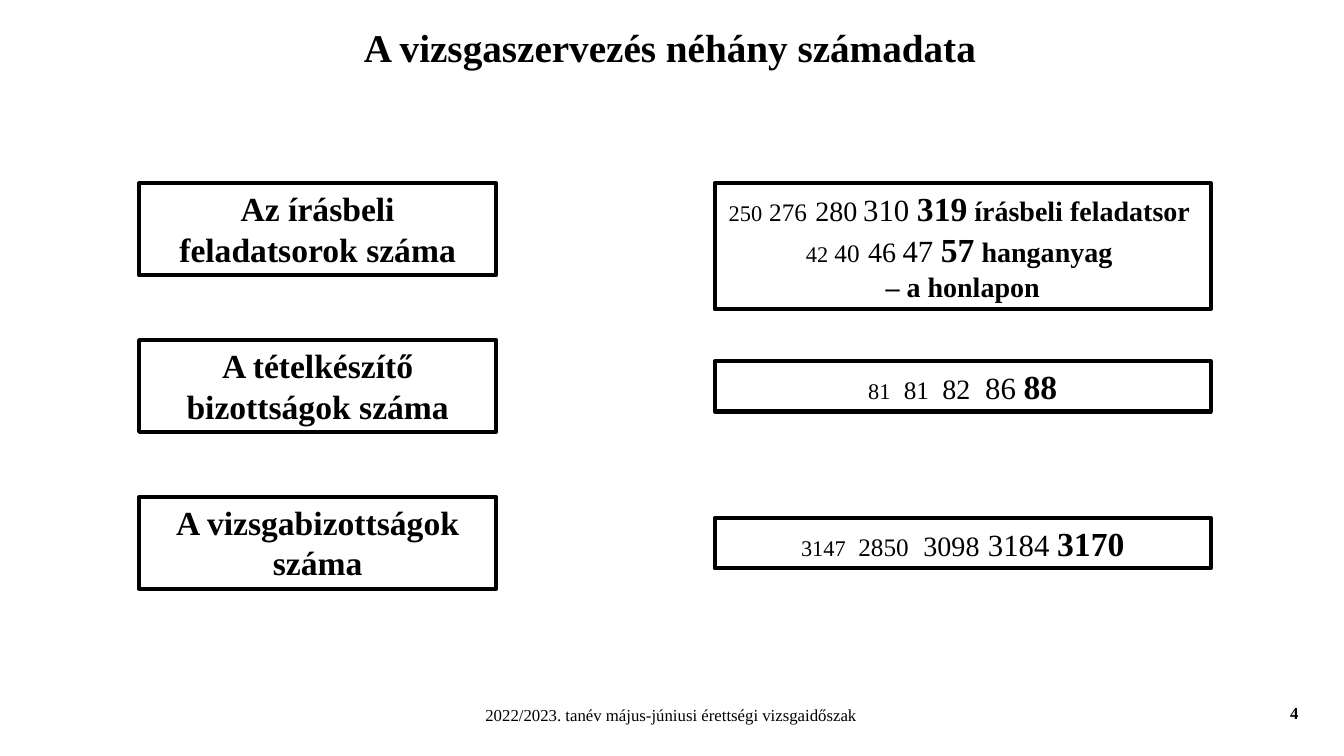
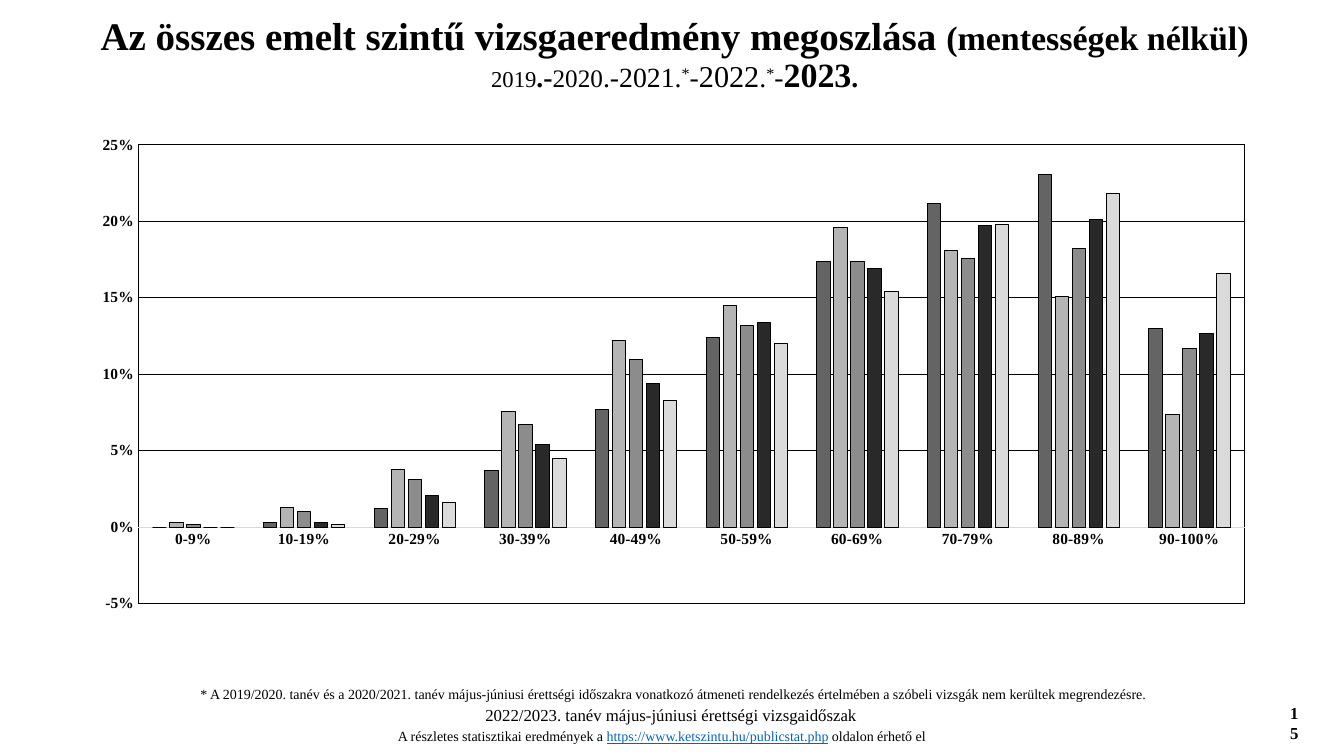
import pptx
import pptx.chart.data
import pptx.dml.color
import pptx.enum.chart
import pptx.enum.shapes
import pptx.enum.text
import pptx.oxml
import pptx.util

Pt = pptx.util.Pt
RGB = pptx.dml.color.RGBColor.from_string
ALIGN = pptx.enum.text.PP_ALIGN
ANCHOR = pptx.enum.text.MSO_ANCHOR


class Theme:
    font = "Times New Roman"
    ink = "000000"
    paper = "FFFFFF"
    link = "0563C1"
    axis = "D9D9D9"
    bars = ["646464", "B4B4B4", "8C8C8C", "292929", "DADADA"]
    title = 28
    box = 24
    footer = 12
    axis_label = 11
    note = 10
    steps = [16, 18, 20, 22, 24]
    title_steps = [16.2, 18, 19.8, 21.6, 24.3]


def write(sp, runs, align=ALIGN.CENTER):
    """Runs are (text, size, flags): b bold, i italic, ^ raised, u link, w wide, / break after."""
    tf = sp.text_frame
    tf.word_wrap = True
    tf.vertical_anchor = ANCHOR.TOP
    p = tf.paragraphs[0]
    p.alignment = align
    for text, size, flags in runs:
        r = p.add_run()
        r.text = text
        r.font.name = Theme.font
        r.font.size = Pt(size)
        r.font.bold = "b" in flags
        r.font.italic = "i" in flags
        r.font.underline = "u" in flags
        r.font.color.rgb = RGB(Theme.link if "u" in flags else Theme.ink)
        rpr = r.font._element
        if "^" in flags:
            rpr.set("baseline", "30000")
        if "w" in flags:
            rpr.set("spc", "450")
        if "/" in flags:
            p.add_line_break()
    return p


def add_text(s, left, top, width, height, runs, align=ALIGN.CENTER):
    sp = s.shapes.add_textbox(Pt(left), Pt(top), Pt(width), Pt(height))
    return sp, write(sp, runs, align)


prs = pptx.Presentation()
prs.slide_width = Pt(960)
prs.slide_height = Pt(540)

xs, sm, md, lg, xl = Theme.steps
t_xs, t_sm, t_md, t_lg, t_xl = Theme.title_steps

titles = [
    (4, 42.5, [("A vizsgaszervezés néhány számadata ", Theme.title, "b")]),
    (15, 51, [
        ("Az összes emelt szintű vizsgaeredmény megoszlása ", 27.9, "b"),
        ("(mentességek nélkül)", t_xl, "b/"),
        ("2019", t_xs, ""), (".-", t_md, "b"), ("2020", t_sm, ""),
        (".-2021.", t_md, ""), ("*", t_md, "^"), ("-", t_md, ""),
        ("2022", t_lg, ""), (".", t_md, ""), ("*", t_md, "^"), ("-", t_md, ""),
        ("2023", t_xl, "b"), (".", t_md, "b"),
    ]),
]

slides = []
for number, height, runs in titles:
    s = prs.slides.add_slide(prs.slide_layouts[6])
    slides.append(s)
    add_text(s, 258.5, 499.7, 442, 21.6,
             [("2022/2023. tanév május-júniusi érettségi vizsgaidőszak", Theme.footer, "")])
    add_text(s, 914.4, 498.2, 20.9, 21.6, [(str(number), Theme.footer, "b")], ALIGN.LEFT)
    sp, p = add_text(s, 57, 14.4, 850, height, runs)
    sp.text_frame.vertical_anchor = ANCHOR.MIDDLE
    p.line_spacing = 0.9

figures_slide, chart_slide = slides

rows = [
    ("Az írásbeli feladatsorok száma", 0, 90, [
        ("250", xs, ""), (" ", md, "bi"), ("276", sm, ""), (" ", xl, "b"),
        ("280", md, ""), (" ", xs, "b"), ("310 ", lg, ""), ("319", xl, "b"),
        (" írásbeli feladatsor ", md, "b/"),
        ("42", xs, ""), (" 40", sm, ""), (" ", xl, "b"), ("46", md, ""),
        (" ", sm, "b"), ("47 ", lg, ""), ("57", xl, "b"),
        (" hanganyag ", md, "b/"), ("– a honlapon", md, "b"),
    ]),
    ("A tételkészítő bizottságok száma", 15, 36, [
        ("81", xs, ""), (" ", md, "w"), ("81", sm, ""), (" ", md, "w"),
        ("82", md, ""), (" ", xl, "bw"), ("86 ", lg, ""), ("88", xl, "b"),
    ]),
    ("A vizsgabizottságok száma", 15, 36, [
        ("3147", xs, ""), (" ", sm, "w"), ("2850", sm, ""), (" ", xl, "bw"),
        ("3098", md, ""), (" ", xl, "b"), ("3184 ", lg, ""), ("3170", xl, "b"),
    ]),
]

for i, (label, offset, height, numbers) in enumerate(rows):
    top = 131 + 112 * i
    boxes = [
        (99.4, top, 255, 65.5, [(label, Theme.box, "b")]),
        (510.5, top + offset, 354.3, height, numbers),
    ]
    for left, y, width, h, runs in boxes:
        sp = figures_slide.shapes.add_shape(
            pptx.enum.shapes.MSO_SHAPE.RECTANGLE, Pt(left), Pt(y), Pt(width), Pt(h))
        sp.shadow.inherit = False
        sp.fill.solid()
        sp.fill.fore_color.rgb = RGB(Theme.paper)
        sp.line.color.rgb = RGB(Theme.ink)
        sp.line.width = Pt(3)
        write(sp, runs)

results = [
    [0, 0.003, 0.012, 0.037, 0.077, 0.124, 0.174, 0.212, 0.231, 0.13],
    [0.003, 0.013, 0.038, 0.076, 0.122, 0.145, 0.196, 0.181, 0.151, 0.074],
    [0.002, 0.01, 0.031, 0.067, 0.11, 0.132, 0.174, 0.176, 0.182, 0.117],
    [0, 0.003, 0.021, 0.054, 0.094, 0.134, 0.169, 0.197, 0.201, 0.127],
    [0, 0.002, 0.016, 0.045, 0.083, 0.12, 0.154, 0.198, 0.218, 0.166],
]
data = pptx.chart.data.CategoryChartData(number_format="0%")
data.categories = [f"{n}-{n + 9 if n < 90 else 100}%" for n in range(0, 100, 10)]
for year, values in enumerate(results, 2019):
    data.add_series(str(year), values)

chart = chart_slide.shapes.add_chart(
    pptx.enum.chart.XL_CHART_TYPE.COLUMN_CLUSTERED,
    Pt(57), Pt(90.7), Pt(850), Pt(354.3), data).chart
chart.has_legend = False
chart.has_title = False
chart.font.name = Theme.font
chart.font.size = Pt(Theme.note)
chart.font.bold = True
chart.font.color.rgb = RGB(Theme.ink)

plot = chart.plots[0]
plot.gap_width = 219
plot.overlap = -27
plot.vary_by_categories = False
for series, color in zip(plot.series, Theme.bars):
    series.format.fill.solid()
    series.format.fill.fore_color.rgb = RGB(color)
    series.format.line.color.rgb = RGB(Theme.ink)
    series.format.line.width = Pt(0.5)

for axis in (chart.category_axis, chart.value_axis):
    axis.major_tick_mark = pptx.enum.chart.XL_TICK_MARK.NONE
    axis.minor_tick_mark = pptx.enum.chart.XL_TICK_MARK.NONE
    font = axis.tick_labels.font
    font.name = Theme.font
    font.size = Pt(Theme.axis_label)
    font.bold = True
    font.color.rgb = RGB(Theme.ink)

chart.category_axis.format.line.color.rgb = RGB(Theme.axis)
chart.category_axis.format.line.width = Pt(0.75)
va = chart.value_axis
va.minimum_scale = -0.05
va.maximum_scale = 0.25
va.major_unit = 0.05
va.format.line.fill.background()
va.tick_labels.number_format = "0%"
va.tick_labels.number_format_is_linked = False
va.major_gridlines.format.line.color.rgb = RGB(Theme.ink)
va.major_gridlines.format.line.width = Pt(0.5)

NS = ('xmlns:c="http://schemas.openxmlformats.org/drawingml/2006/chart" '
      'xmlns:a="http://schemas.openxmlformats.org/drawingml/2006/main"')
area = chart._chartSpace.chart.plotArea
for old in area.xpath("c:layout"):
    area.remove(old)
area.insert(0, pptx.oxml.parse_xml(
    f'<c:layout {NS}><c:manualLayout><c:layoutTarget val="inner"/>'
    '<c:xMode val="edge"/><c:yMode val="edge"/><c:x val="0.049"/><c:y val="0.036"/>'
    '<c:w val="0.93"/><c:h val="0.925"/></c:manualLayout></c:layout>'))
area.append(pptx.oxml.parse_xml(
    f'<c:spPr {NS}><a:solidFill><a:srgbClr val="{Theme.paper}"/></a:solidFill>'
    f'<a:ln w="6350"><a:solidFill><a:srgbClr val="{Theme.ink}"/></a:solidFill></a:ln></c:spPr>'))

add_text(chart_slide, 277.2, 516.2, 405.4, 19.4, [
    ("A részletes statisztikai eredmények a ", Theme.note, ""),
    ("https://www.ketszintu.hu/publicstat.php", Theme.note, "u"),
    (" oldalon érhető el", Theme.note, ""),
], ALIGN.LEFT)
add_text(chart_slide, 57, 486, 850, 19.4, [
    ("* A 2019/2020. tanév és a 2020/2021. tanév május-júniusi érettségi időszakra vonatkozó "
     "átmeneti rendelkezés értelmében a szóbeli vizsgák nem kerültek megrendezésre. ",
     Theme.note, ""),
])

prs.save("out.pptx")
